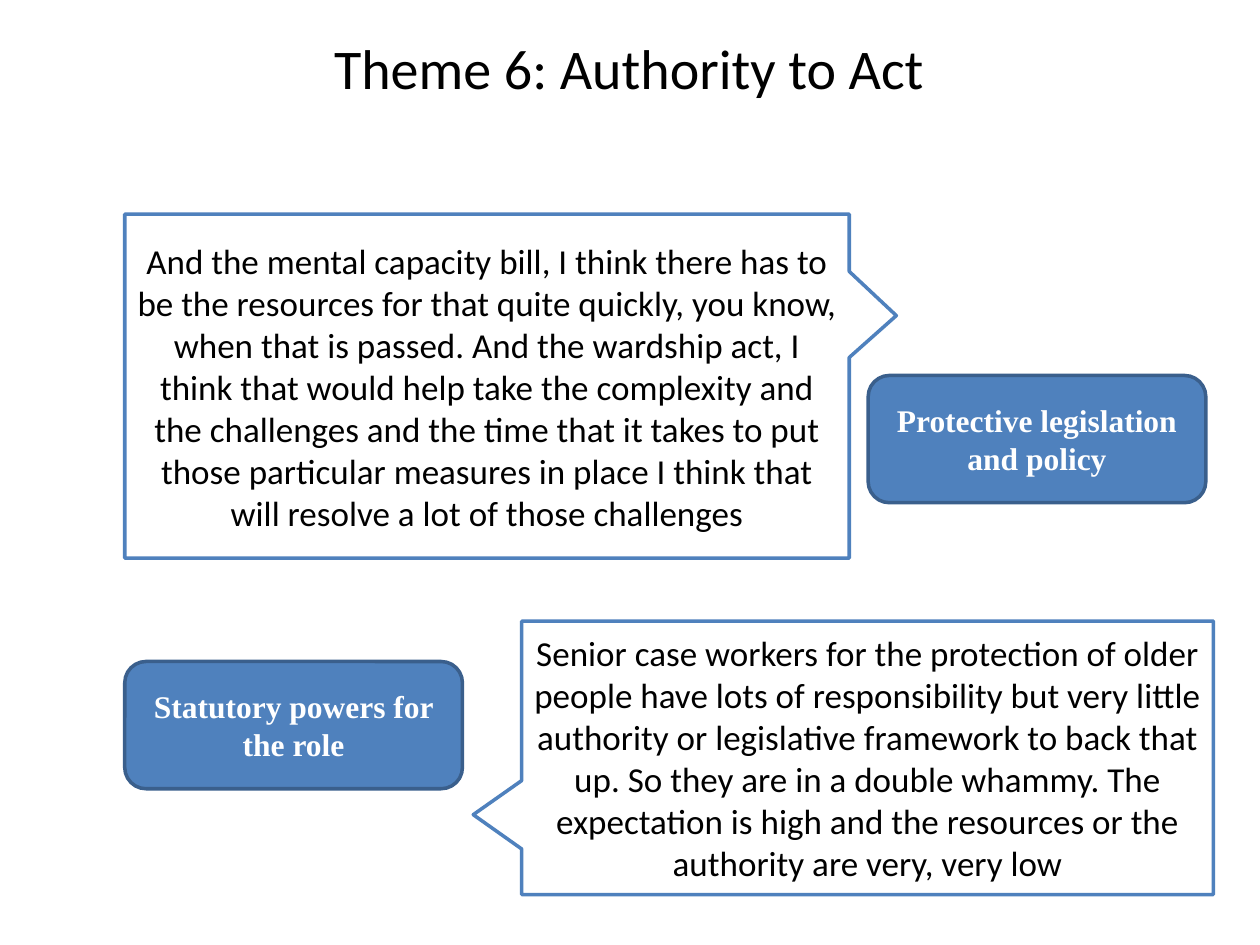
from pptx import Presentation
from pptx.dml.color import RGBColor
from pptx.enum.shapes import MSO_SHAPE as Shape
from pptx.enum.text import MSO_ANCHOR as Anchor, PP_ALIGN as Align
from pptx.util import Inches, Pt

WIDTH, HEIGHT = 10, 7.5
LEFT_MARGIN = 0.99
LABEL_SIZE = (2.68, 1.01)

TITLE = "Theme 6: Authority to Act"
TITLE_BOX = (0.58, 0.22, 8.83, 1.25)
LABELS = [
    ("Protective legislation and policy", (6.89, 2.98)),
    ("Statutory powers for the role", (LEFT_MARGIN, 5.25)),
]
QUOTES = [
    ("And the mental capacity bill, I think there has to be the resources for "
     "that quite quickly, you know, when that is passed. And the wardship act, "
     "I think that would help take the complexity and the challenges and the "
     "time that it takes to put those particular measures in place I think that "
     "will resolve a lot of those challenges",
     (LEFT_MARGIN, 1.7, 5.75, 2.73), (0.565, -0.205)),
    ("Senior case workers for the protection of older people have lots of "
     "responsibility but very little authority or legislative framework to back "
     "that up. So they are in a double whammy. The expectation is high and the "
     "resources or the authority are very, very low",
     (4.14, 4.93, 5.49, 2.17), (-0.57, 0.208)),
]

TITLE_FONT = {"name": "Calibri", "size": Pt(32), "bold": False}
QUOTE_FONT = {"name": "Calibri", "size": Pt(20), "bold": False}
LABEL_FONT = {"name": "Times New Roman", "size": Pt(18), "bold": True}


def color(value):
    return RGBColor.from_string(value)


def write(shape, text, font, ink, anchor):
    frame = shape.text_frame
    frame.word_wrap = True
    frame.vertical_anchor = anchor
    paragraph = frame.paragraphs[0]
    paragraph.text = text
    paragraph.alignment = Align.CENTER
    for name, value in font.items():
        setattr(paragraph.font, name, value)
    paragraph.font.color.rgb = color(ink)


def add_box(slide, kind, box, fill, line, text, font, ink):
    shape = slide.shapes.add_shape(kind, *map(Inches, box))
    shape.shadow.inherit = False
    shape.fill.solid()
    shape.fill.fore_color.rgb = color(fill)
    shape.line.color.rgb = color(line)
    shape.line.width = Pt(2)
    write(shape, text, font, ink, Anchor.MIDDLE)
    return shape


def main():
    presentation = Presentation()
    presentation.slide_width, presentation.slide_height = Inches(WIDTH), Inches(HEIGHT)
    slide = presentation.slides.add_slide(presentation.slide_layouts[6])

    title = slide.shapes.add_textbox(*map(Inches, TITLE_BOX))
    write(title, TITLE, TITLE_FONT, "000000", Anchor.TOP)

    for text, corner in LABELS:
        add_box(slide, Shape.ROUNDED_RECTANGLE, corner + LABEL_SIZE,
                "4F81BD", "3A5F8C", text, LABEL_FONT, "FFFFFF")

    for text, box, tip in QUOTES:
        callout = add_box(slide, Shape.RECTANGULAR_CALLOUT, box,
                          "FFFFFF", "4F81BD", text, QUOTE_FONT, "000000")
        for index, offset in enumerate(tip):
            callout.adjustments[index] = offset

    presentation.save("out.pptx")


if __name__ == "__main__":
    main()
